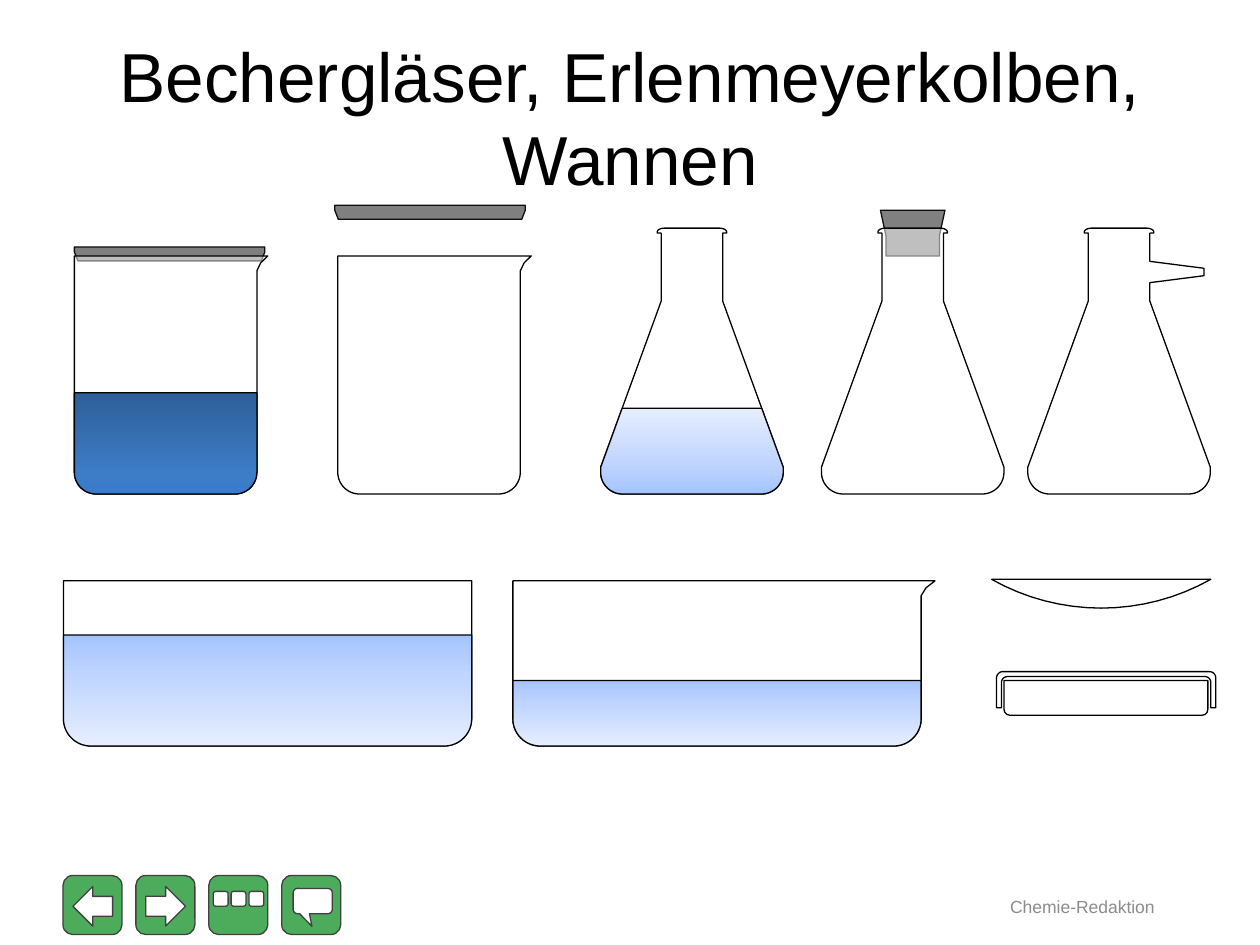
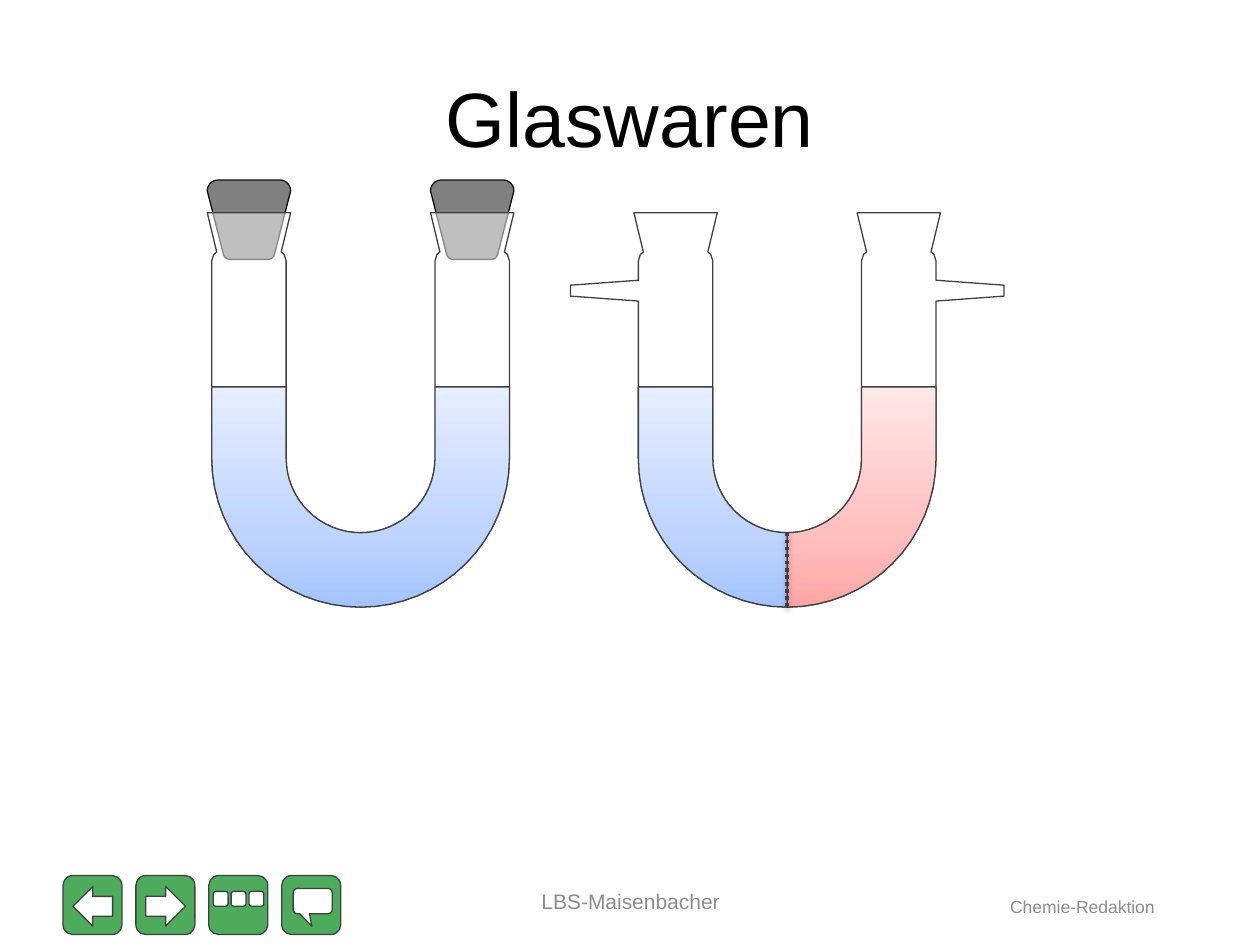
import copy
import math

from lxml import etree
from pptx import Presentation
from pptx import util as u
from pptx.dml import color
from pptx.enum import dml, shapes, text
from pptx.oxml import ns

Cm = u.Cm
KIND = shapes.MSO_SHAPE

# Content (lengths in cm)
COLORS = {
    "glass": "FFFFFF", "outline": "000000", "tube_outline": "404040",
    "title": "000000", "footer": "8C8C8C", "button": "4DAC5C",
    "lid": "7F7F7F", "stopper": "808080", "stopper_outline": "0D0D0D",
}
BLUE = [(0, "A4C4FF"), (35, "BFD4FF"), (100, "E6EEFF")]
RED = [(0, "FFA6A5"), (35, "FFC0BF"), (100, "FFE7E7")]
DARK_BLUE = [(0, "2F5F99"), (80, "3D7CC7"), (100, "3A7CCB")]
FONT = "Arial"
TITLE_BOX = (1.27, 0.76, 22.86, 3.18)
EDITOR = ("Chemie-Redaktion", (20.04, 17.93, 3.56, 0.71), 10)
AUTHOR = ("LBS-Maisenbacher", (8.69, 17.65, 8.05, 1.02), 12)
TITLES = [("Bechergläser, Erlenmeyerkolben, Wannen", 39.6), ("Glaswaren", 44)]

BEAKERS = [  # left, lid left, lid top, liquid level
    {"left": 1.5, "lid": (1.5, 4.98), "level": 7.92},
    {"left": 6.81, "lid": (6.75, 4.14), "level": None},
]
FLASKS = [
    {"center": 13.95, "level": 8.23},
    {"center": 18.4, "stopper": True},
    {"center": 22.56, "side_arm": True},
]
TROUGHS = [
    {"left": 1.28, "level": 12.8, "spout": False},
    {"left": 10.34, "level": 13.72, "spout": True},
]
U_TUBES = [
    {"center": 7.27, "stoppers": True},
    {"center": 15.87, "stoppers": False},
]


# Outline geometry
def arc(cx, cy, rx, ry, start, end, steps=16):
    angles = [math.radians(start + (end - start) * i / steps)
              for i in range(steps + 1)]
    return [(cx + rx * math.cos(a), cy + ry * math.sin(a)) for a in angles]


def cup(left, right, opening, base, radius):
    """Outline from the right lip around the base to the left lip."""
    ry = math.copysign(radius, base - opening)
    return [(right, opening),
            *arc(right - radius, base - ry, radius, ry, 0, 90),
            *arc(left + radius, base - ry, radius, ry, 90, 180),
            (left, opening)]


def symmetric(center, right, left=None):
    """Right side from top to bottom, then its counterpart upwards."""
    left = right if left is None else left
    return ([(center + x, y) for x, y in right]
            + [(center - x, y) for x, y in reversed(left)])


def side_arm(x, top, reach, height, taper):
    return [(x, top), (x + reach, top + taper),
            (x + reach, top + height - taper), (x, top + height)]


def spout(right, top, reach):
    return [(right + reach, top), (right + 0.35 * reach, top + 0.14),
            (right, top + 0.3)]


# Drawing helpers
def paint(shape, fill, line, alpha=None, rising=False):
    shape.shadow.inherit = False
    shape.line.color.rgb = color.RGBColor.from_string(COLORS[line])
    shape.line.width = u.Pt(0.75)
    if isinstance(fill, str):
        shape.fill.solid()
        shape.fill.fore_color.rgb = color.RGBColor.from_string(COLORS[fill])
        if alpha:
            rgb = shape._element.spPr.find(ns.qn("a:solidFill"))[0]
            etree.SubElement(rgb, ns.qn("a:alpha"), val=str(alpha * 1000))
        return
    shape.fill.gradient()
    stop_list = shape._element.spPr.find(".//" + ns.qn("a:gsLst"))
    stop_list.append(copy.deepcopy(stop_list[0]))
    shape.fill.gradient_angle = 90 if rising else 270
    for stop, (position, rgb) in zip(shape.fill.gradient_stops, fill):
        stop.position = position / 100
        stop.color.rgb = color.RGBColor.from_string(rgb)


def outline(slide, points, fill, line="outline", **look):
    start, *rest = [(Cm(x), Cm(y)) for x, y in points]
    builder = slide.shapes.build_freeform(*start)
    builder.add_line_segments(rest, close=True)
    paint(builder.convert_to_shape(), fill, line, **look)


def preset(slide, kind, box, fill, line, adjustments=(), **look):
    shape = slide.shapes.add_shape(kind, *map(Cm, box))
    for i, value in enumerate(adjustments):
        shape.adjustments[i] = value
    paint(shape, fill, line, **look)
    return shape


def label(slide, wording, box, size, tone="footer"):
    frame = slide.shapes.add_textbox(*map(Cm, box)).text_frame
    frame.word_wrap = True
    frame.vertical_anchor = text.MSO_ANCHOR.MIDDLE
    paragraph = frame.paragraphs[0]
    paragraph.text = wording
    paragraph.alignment = text.PP_ALIGN.CENTER
    paragraph.font.name = FONT
    paragraph.font.size = u.Pt(size)
    paragraph.font.color.rgb = color.RGBColor.from_string(COLORS[tone])


# Shared frame: navigation buttons, footer, title
def add_frame(slide, title, size):
    top, button, pitch = 17.65, 1.19, 1.47
    back, forward, overview, comment = [1.27 + i * pitch for i in range(4)]
    for left in (back, forward, overview, comment):
        preset(slide, KIND.ROUNDED_RECTANGLE, (left, top, button, button),
               "button", "tube_outline")
    for left, turn in ((back, 180), (forward, 0)):
        arrow = preset(slide, KIND.RIGHT_ARROW,
                       (left + 0.2, top + 0.22, 0.8, 0.8), "glass", "tube_outline")
        arrow.rotation = turn
    for i in range(3):
        preset(slide, KIND.ROUNDED_RECTANGLE,
               (overview + 0.09 + i * 0.36, top + 0.32, 0.3, 0.3),
               "glass", "tube_outline")
    preset(slide, KIND.ROUNDED_RECTANGULAR_CALLOUT,
           (comment + 0.23, top + 0.26, 0.79, 0.51), "glass", "tube_outline",
           (-0.02, 1, 0.17))
    label(slide, *EDITOR)
    label(slide, title, TITLE_BOX, size, "title")


# Glassware of the first slide
def add_beaker(slide, left, lid, level):
    right, top, base, radius = left + 3.68, 5.16, 9.96, 0.44
    lid_left, lid_top = lid
    half = 1.92
    outline(slide, symmetric(lid_left + half, [
        (half, lid_top), (half, lid_top + 0.1), (half - 0.07, lid_top + 0.28)]),
        "lid", "stopper_outline")
    outline(slide, spout(right, top, 0.22) + cup(left, right, top + 0.3, base, radius)
            + [(left, top)], "glass", alpha=50)
    if level:
        outline(slide, cup(left, right, level, base, radius), DARK_BLUE)


def add_flask(slide, center, level=None, stopper=False, side_arm_=False):
    neck, foot, shoulder_y, foot_y, base, radius = 0.62, 1.84, 6.07, 9.42, 9.96, 0.44
    bottom = [(foot, foot_y), *arc(foot - radius, base - radius, radius, radius, 0, 90)]
    rim = [*arc(0.55, 4.68, 0.15, 0.08, -90, 0), (0.7, 4.7), (neck, 4.7)]
    body = [(neck, shoulder_y), *bottom]
    if stopper:
        outline(slide, symmetric(center, [
            (0.65, 4.24), (0.54, 4.75), (0.54, 5.16)]), "stopper", "stopper_outline")
    arm = side_arm(neck, 5.27, 1.09, 0.43, 0.14) if side_arm_ else []
    outline(slide, symmetric(center, rim + arm + body, rim + body), "glass", alpha=50)
    if level:
        share = (level - shoulder_y) / (foot_y - shoulder_y)
        surface = (neck + (foot - neck) * share, level)
        outline(slide, symmetric(center, [surface, *bottom]), BLUE, rising=True)


def add_trough(slide, left, level, spout_):
    width, top, base, radius = 8.23, 11.71, 15.04, 0.55
    right = left + width
    if spout_:
        outline(slide, spout(right, top, 0.28)
                + cup(left, right, top + 0.3, base, radius) + [(left, top)],
                "glass", alpha=50)
    else:
        preset(slide, KIND.ROUND_2_SAME_RECTANGLE, (left, top, width, base - top),
               "glass", "outline", (0, 0.17), alpha=50)
    outline(slide, cup(left, right, level, base, radius), BLUE)


def add_petri_dish(slide):
    left, right, top, rim, wall = 20.09, 24.51, 13.54, 14.27, 0.1
    outline(slide, cup(left, right, rim, top, 0.13)
            + cup(left + wall, right - wall, rim, top + wall, 0.12)[::-1], "glass")
    preset(slide, KIND.ROUND_2_SAME_RECTANGLE, (20.24, 13.72, 4.11, 0.7),
           "glass", "outline", (0, 0.17), alpha=50)


def add_watch_glass(slide):
    outline(slide, arc(22.2, 7.76, 4.5, 4.5, 60.6, 119.4), "glass")


# U-tubes of the second slide
OUTER, INNER, BEND_Y, LEVEL, NECK_Y = 3, 1.5, 9.24, 7.8, 5.26


def u_walls(center, opening):
    outer, inner = [cup(center - r, center + r, opening, BEND_Y + r, r)
                    for r in (OUTER, INNER)]
    return outer, inner[::-1]


def add_u_tube(slide, center, stoppers):
    middle = (OUTER + INNER) / 2
    neck = [(0.84, 4.29), (0.65, 5.08), (0.71, 5.13), (0.75, NECK_Y)]
    left_neck, right_neck = [
        symmetric(x, neck)[len(neck):] + symmetric(x, neck)[:len(neck)]
        for x in (center - middle, center + middle)]
    outer, inner = u_walls(center, NECK_Y)
    if stoppers:
        half = [*arc(0.62, 3.85, 0.22, 0.22, -90, 0),
                *arc(0.38, 5.09, 0.14, 0.14, 15, 90)]
        for x in (center - middle, center + middle):
            outline(slide, symmetric(x, half), "stopper", "stopper_outline")
        outline(slide, outer + left_neck + inner + right_neck,
                "glass", "tube_outline", alpha=50)
        outer, inner = u_walls(center, LEVEL)
        outline(slide, outer + inner, BLUE, "tube_outline", rising=True)
        return
    arm = side_arm(OUTER, 5.65, 1.37, 0.42, 0.1)
    right_arm = [(center + x, y) for x, y in arm]
    left_arm = [(center - x, y) for x, y in arm[::-1]]
    outline(slide, right_arm + outer[1:-1] + left_arm + left_neck + inner + right_neck,
            "glass", "tube_outline")
    leg = [(OUTER, LEVEL), *arc(0, BEND_Y, OUTER, OUTER, 0, 90),
           *arc(0, BEND_Y, INNER, INNER, 90, 0), (INNER, LEVEL)]
    for side, liquid in ((-1, BLUE), (1, RED)):
        outline(slide, [(center + side * x, y) for x, y in leg],
                liquid, "tube_outline", rising=True)
    add_membrane(slide, center)


def add_membrane(slide, center):
    membrane = slide.shapes.add_connector(
        shapes.MSO_CONNECTOR.STRAIGHT,
        *map(Cm, (center, BEND_Y + INNER, center, BEND_Y + OUTER)))
    membrane.line.color.rgb = color.RGBColor.from_string(COLORS["tube_outline"])
    membrane.line.width = u.Pt(2)
    membrane.line.dash_style = dml.MSO_LINE.ROUND_DOT
    effects = etree.SubElement(membrane._element.spPr, ns.qn("a:effectLst"))
    shadow = etree.SubElement(effects, ns.qn("a:outerShdw"), blurRad=str(u.Pt(3.1)),
                              dist=str(u.Pt(1.6)), dir="5400000", rotWithShape="0")
    tone = etree.SubElement(shadow, ns.qn("a:srgbClr"), val="000000")
    etree.SubElement(tone, ns.qn("a:alpha"), val="38000")


def main():
    deck = Presentation()
    deck.slide_width, deck.slide_height = Cm(25.4), Cm(19.05)
    vessels, tubes = [deck.slides.add_slide(deck.slide_layouts[6]) for _ in TITLES]
    for slide, title in zip((vessels, tubes), TITLES):
        add_frame(slide, *title)

    for beaker in BEAKERS:
        add_beaker(vessels, **beaker)
    for flask in FLASKS:
        add_flask(vessels, flask["center"], flask.get("level"),
                  flask.get("stopper"), flask.get("side_arm"))
    for trough in TROUGHS:
        add_trough(vessels, trough["left"], trough["level"], trough["spout"])
    add_watch_glass(vessels)
    add_petri_dish(vessels)

    label(tubes, *AUTHOR)
    for tube in U_TUBES:
        add_u_tube(tubes, **tube)
    deck.save("out.pptx")


if __name__ == "__main__":
    main()
